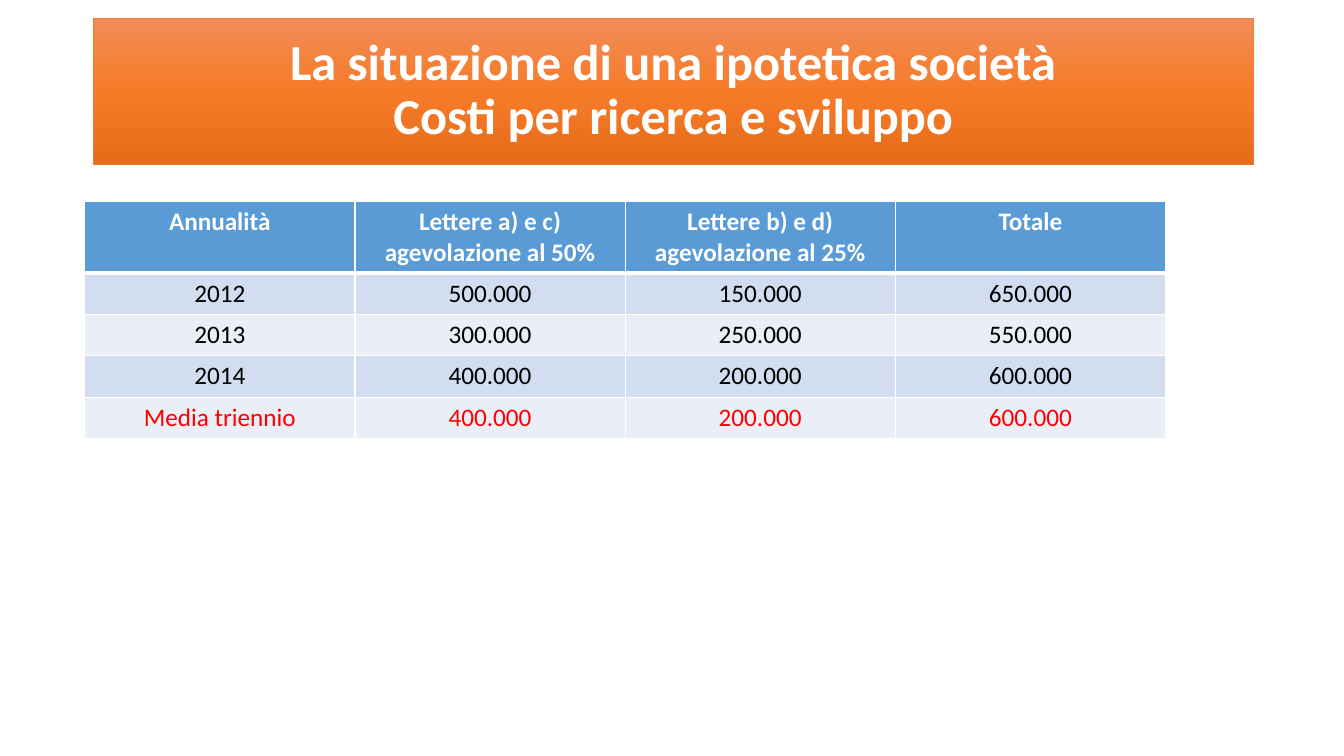
from copy import deepcopy
from dataclasses import dataclass

from lxml import etree
from pptx import Presentation
from pptx.dml.color import RGBColor
from pptx.enum.text import MSO_ANCHOR, MSO_AUTO_SIZE, PP_ALIGN
from pptx.oxml.ns import qn
from pptx.util import Inches, Pt

CENTER = PP_ALIGN.CENTER
MIDDLE = MSO_ANCHOR.MIDDLE
NO_AUTOFIT = MSO_AUTO_SIZE.NONE

COLORS = {
    "white": "FFFFFF",
    "black": "000000",
    "red": "FF0000",
    "header": "5B9BD5",
    "band_dark": "D2DEEF",
    "band_light": "EAEFF7",
    "title_top": "F18C57",
    "title_mid": "F67B28",
    "title_bottom": "E56C19",
    "title_line": "ED7D31",
}
TITLE_BOX = (0.93, 0.18, 11.5, 1.45)
TITLE_STOPS = ((0, "title_top"), (0.5, "title_mid"), (1, "title_bottom"))
TABLE_LEFT, TABLE_TOP = 0.84, 2
COL_WIDTH = 2.68
HEADER_HEIGHT, ROW_HEIGHT = 0.68, 0.41


@dataclass(frozen=True)
class CostRow:
    values: tuple[str, ...]
    fill: str
    color: str = "black"
    bold: bool = False
    height: float = ROW_HEIGHT
    bottom_border: float = 1


ROWS = (
    CostRow(
        ("Annualità", "Lettere a) e c) agevolazione al 50%",
         "Lettere b) e d) agevolazione al 25%", "Totale"),
        "header", "white", True, HEADER_HEIGHT, 3,
    ),
    CostRow(("2012", "500.000", "150.000", "650.000"), "band_dark"),
    CostRow(("2013", "300.000", "250.000", "550.000"), "band_light"),
    CostRow(("2014", "400.000", "200.000", "600.000"), "band_dark"),
    CostRow(("Media triennio", "400.000", "200.000", "600.000"), "band_light", "red"),
)


def rgb(name: str) -> RGBColor:
    return RGBColor.from_string(COLORS[name])


def format_text(p, size: float, color: str, bold: bool) -> None:
    p.alignment = CENTER
    for r in p.runs:
        for key, value in {"name": "Calibri", "size": Pt(size), "bold": bold}.items():
            setattr(r.font, key, value)
        r.font.color.rgb = rgb(color)


def add_title(slide, text: str) -> None:
    sp = slide.shapes.title
    sp.left, sp.top, sp.width, sp.height = (Inches(v) for v in TITLE_BOX)
    sp.fill.gradient()
    sp.fill.gradient_angle = 270
    stops = sp._element.spPr.find(".//" + qn("a:gsLst"))
    stops.append(deepcopy(stops[-1]))
    for stop, (position, color) in zip(sp.fill.gradient_stops, TITLE_STOPS):
        stop.position = position
        stop.color.rgb = rgb(color)
    sp.line.color.rgb = rgb("title_line")
    sp.line.width = Pt(0.5)
    tf = sp.text_frame
    tf.text = text
    for key, value in {
        "word_wrap": True, "auto_size": NO_AUTOFIT, "vertical_anchor": MIDDLE,
    }.items():
        setattr(tf, key, value)
    p = tf.paragraphs[0]
    p.line_spacing = 0.9
    format_text(p, 36, "white", True)


def set_borders(cell, bottom: float) -> None:
    tc_pr = cell._tc.get_or_add_tcPr()
    for side, width in {"lnL": 1, "lnR": 1, "lnT": 1, "lnB": bottom}.items():
        ln = etree.SubElement(tc_pr, qn(f"a:{side}"), w=str(Pt(width)))
        fill = etree.SubElement(ln, qn("a:solidFill"))
        etree.SubElement(fill, qn("a:srgbClr"), val=COLORS["white"])


def add_cost_table(slide, rows: tuple[CostRow, ...]) -> None:
    n_cols = len(rows[0].values)
    table = slide.shapes.add_table(
        len(rows), n_cols, Inches(TABLE_LEFT), Inches(TABLE_TOP),
        Inches(COL_WIDTH * n_cols), Inches(sum(row.height for row in rows)),
    ).table
    for column in table.columns:
        column.width = Inches(COL_WIDTH)
    top_border = 1
    for i, row in enumerate(rows):
        table.rows[i].height = Inches(row.height)
        for cell, value in zip(table.rows[i].cells, row.values):
            cell.text = value
            set_borders(cell, row.bottom_border)
            cell._tc.tcPr.find(qn("a:lnT")).set("w", str(Pt(top_border)))
            cell.fill.solid()
            cell.fill.fore_color.rgb = rgb(row.fill)
            format_text(cell.text_frame.paragraphs[0], 18, row.color, row.bold)
        top_border = row.bottom_border


def main() -> None:
    prs = Presentation()
    prs.slide_width, prs.slide_height = Inches(13.33), Inches(7.5)
    slide = prs.slides.add_slide(prs.slide_layouts[5])
    add_title(slide, "La situazione di una ipotetica società\vCosti per ricerca e sviluppo")
    add_cost_table(slide, ROWS)
    prs.save("out.pptx")


if __name__ == "__main__":
    main()
